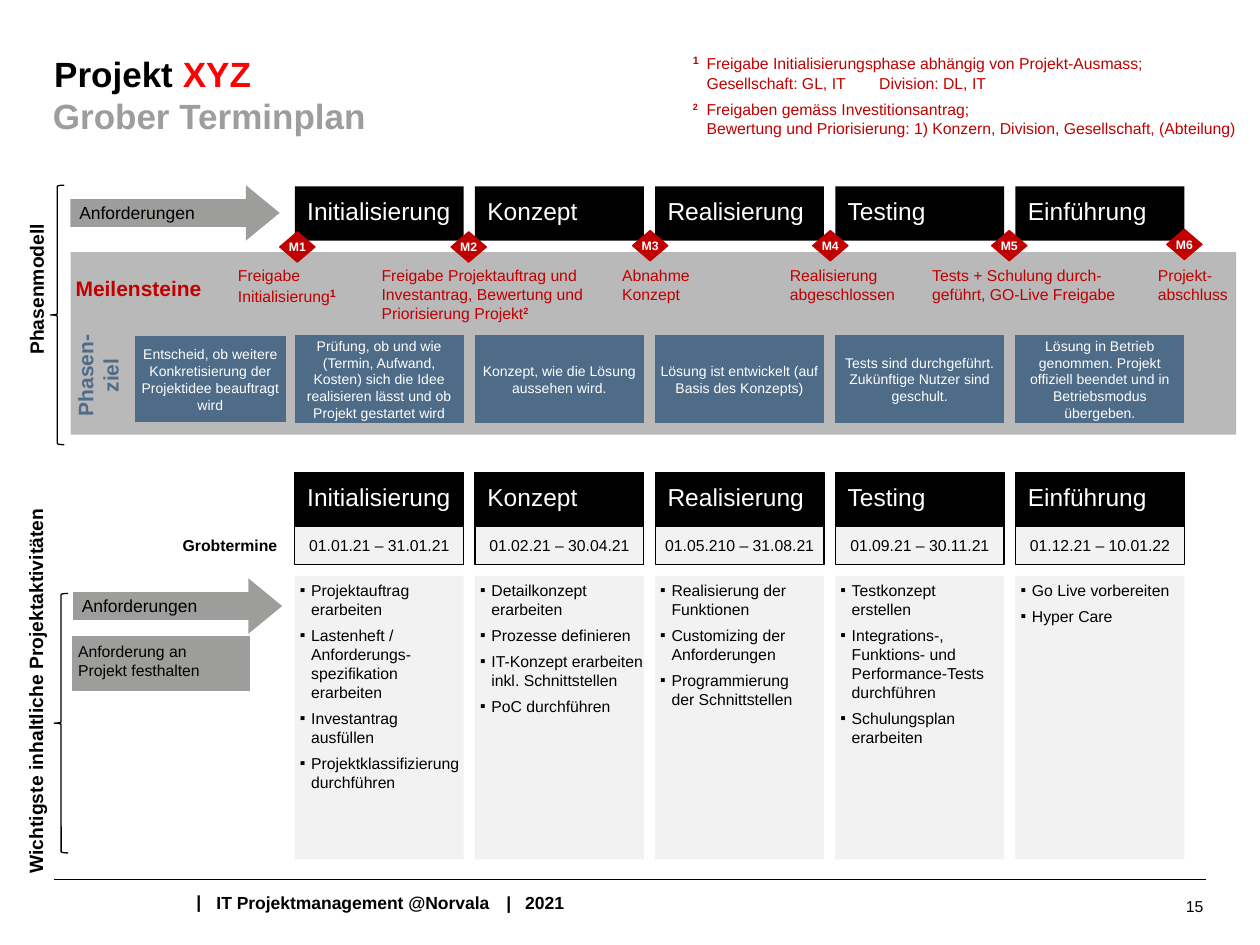
from copy import deepcopy

from lxml import etree
from pptx import Presentation
from pptx import util as u
from pptx.dml.color import RGBColor
from pptx.enum import shapes, text
from pptx.oxml.ns import qn

BLACK, WHITE, RED, DARK_RED = "000000", "FFFFFF", "FF0000", "C00000"
GREY, PALE, BLUE, INK = "9D9D9C", "F2F2F2", "4E6C88", "1A1A1A"
LEFT, CENTER, RIGHT = (text.PP_ALIGN.LEFT, text.PP_ALIGN.CENTER, text.PP_ALIGN.RIGHT)
TOP, MIDDLE = text.MSO_ANCHOR.TOP, text.MSO_ANCHOR.MIDDLE
KIND = shapes.MSO_SHAPE
NO_INSET, SLIM, TITLE_INSET = (0, 0, 0, 0), (0.04,) * 4, (0, 0.05, 0.1, 0.05)
DATE_INSET = (0.07, 0.04, 0.07, 0.04)


def color(value):
    return RGBColor.from_string(value)


def child(parent, tag, **attributes):
    return etree.SubElement(parent, qn(tag), attributes)


def write_span(para, words, size, ink, bold, raised=False):
    """Write one run per line, with a line break of the same size between."""
    for number, line in enumerate(words.split("\n")):
        if number:
            para.add_line_break()
            para._p[-1].append(deepcopy(span._r.rPr))
        span = para.add_run()
        span.text = line
        span.font.name, span.font.size, span.font.bold = "Arial", u.Pt(size), bold
        span.font.color.rgb = color(ink)
        if raised:
            span._r.rPr.set("baseline", "30000")


def write(frame, paragraphs, size=9, ink=BLACK, bold=False, align=LEFT, anchor=TOP,
          inset=(0.1, 0.05, 0.1, 0.05), wrap=True, bullet=None, gaps=(), tabs=()):
    """Fill a frame; a paragraph is a string or a list of (words, changes)."""
    frame.auto_size = text.MSO_AUTO_SIZE.NONE
    frame.word_wrap, frame.vertical_anchor = wrap, anchor
    (frame.margin_left, frame.margin_top,
     frame.margin_right, frame.margin_bottom) = map(u.Inches, inset)
    if isinstance(paragraphs, str):
        paragraphs = [paragraphs]
    for number, content in enumerate(paragraphs):
        para = frame.add_paragraph() if number else frame.paragraphs[0]
        para.alignment = align
        props = para._p.get_or_add_pPr()
        if bullet:
            props.set("marL", str(u.Inches(0.09)))
            props.set("indent", str(-u.Inches(0.09)))
            child(props, "a:buFont", typeface="Arial")
            child(props, "a:buChar", char=bullet)
        if tabs:
            stops = child(props, "a:tabLst")
            for stop in tabs:
                child(stops, "a:tab", pos=str(u.Inches(stop)), algn="l")
        if number and gaps:
            para.space_before = u.Pt(gaps[number - 1])
        if isinstance(content, str):
            content = [(content, {})]
        for words, changes in content:
            write_span(para, words, **{"size": size, "ink": ink, "bold": bold, **changes})


class Plan:
    """Current slide on a grid of 100 columns by 75 rows."""

    def __init__(self, deck):
        self.column, self.row = deck.slide_width / 100, deck.slide_height / 75
        self.page = deck.slides.add_slide(deck.slide_layouts[5])

    def place(self, left, top, width, height):
        return [round(n) for n in (left * self.column, top * self.row,
                                   width * self.column, height * self.row)]

    def title(self, area, paragraphs, **style):
        title = self.page.shapes.title
        title.left, title.top, title.width, title.height = self.place(*area)
        write(title.text_frame, paragraphs, **style)

    def label(self, area, paragraphs, turn=0, **style):
        box = self.page.shapes.add_textbox(*self.place(*area))
        box.rotation = turn
        write(box.text_frame, paragraphs, **style)

    def shape(self, kind, area, paragraphs=None, fill=None, line=None, opacity=None,
              adjust=(), **style):
        box = self.page.shapes.add_shape(kind, *self.place(*area))
        box.shadow.inherit = False
        if fill:
            box.fill.solid()
            box.fill.fore_color.rgb = color(fill)
            if opacity:
                tone = box.fill._xPr.find(".//" + qn("a:srgbClr"))
                child(tone, "a:alpha", val=str(opacity * 1000))
        else:
            box.fill.background()
        if line:
            box.line.color.rgb, box.line.width = color(line), u.Pt(0.75)
        else:
            box.line.fill.background()
        for number, value in enumerate(adjust):
            box.adjustments[number] = value
        if paragraphs:
            write(box.text_frame, paragraphs, **style)

    def rule(self, left, right, row):
        start, end = self.place(left, row, 0, 0), self.place(right, row, 0, 0)
        line = self.page.shapes.add_connector(shapes.MSO_CONNECTOR.STRAIGHT, *start[:2], *end[:2])
        line.line.color.rgb, line.line.width = color(BLACK), u.Pt(0.75)
        child(line._element.spPr, "a:effectLst")

    def heading(self, left, top, name, line=None):
        self.shape(KIND.RECTANGLE, (left, top, 13.4, 4.3), name, fill=BLACK, line=line,
                   size=14, ink=WHITE, anchor=MIDDLE, inset=(0.1, 0, 0.1, 0.05))

    def arrow(self, left, top):
        self.shape(KIND.RIGHT_ARROW, (left, top, 16.6, 4.4), fill=GREY, adjust=(0.5, 0.609))
        self.label((left + 0.7, top + 1.35, 13.4, 1.7), "Anforderungen", size=10, inset=NO_INSET)

    def goal(self, left, top, width, height, words):
        self.shape(KIND.FLOWCHART_PROCESS, (left, top, width, height), words, fill=BLUE, size=8,
                   ink=WHITE, align=CENTER, anchor=MIDDLE, inset=SLIM)

    def section(self, brace, label, name):
        self.shape(KIND.LEFT_BRACE, brace, line=BLACK)
        self.label(label, name, turn=270, size=11, bold=True, align=CENTER, inset=NO_INSET)


# Phase: name, goal, dates, activities
PHASES = [
    ("Initialisierung", "Prüfung, ob und wie (Termin, Aufwand, Kosten) sich die Idee "
     "realisieren lässt und ob Projekt gestartet wird", "01.01.21 – 31.01.21",
     ["Projektauftrag\nerarbeiten", "Lastenheft /\nAnforderungs-\nspezifikation\nerarbeiten",
      "Investantrag\nausfüllen", "Projektklassifizierung\ndurchführen"]),
    ("Konzept", "Konzept, wie die Lösung aussehen wird.", "01.02.21 – 30.04.21",
     ["Detailkonzept\nerarbeiten", "Prozesse definieren",
      "IT-Konzept erarbeiten\ninkl. Schnittstellen", "PoC durchführen"]),
    ("Realisierung", "Lösung ist entwickelt (auf Basis des Konzepts)", "01.05.210 – 31.08.21",
     ["Realisierung der\nFunktionen", "Customizing der\nAnforderungen",
      "Programmierung\nder Schnittstellen"]),
    ("Testing", "Tests sind durchgeführt. Zukünftige Nutzer sind geschult.",
     "01.09.21 – 30.11.21",
     ["Testkonzept\nerstellen", "Integrations-,\nFunktions- und\nPerformance-Tests\ndurchführen",
      "Schulungsplan\nerarbeiten"]),
    ("Einführung", "Lösung in Betrieb genommen. Projekt offiziell beendet und in "
     "Betriebsmodus übergeben.", "01.12.21 – 10.01.22", ["Go Live vorbereiten", "Hyper Care"]),
]
RAISED = {"bold": True, "raised": True}
# Milestone: diamond left and top, label left and width, label
MILESTONES = [
    (22.2, 18.4, 17.9, 9.7, [("Freigabe\nInitialisierung", {}), ("1", {**RAISED, "size": 10.5})]),
    (35.8, 18.4, 29.3, 17.8, [("Freigabe Projektauftrag und\nInvestantrag, Bewertung und\n"
                               "Priorisierung Projekt", {}), ("2", RAISED)]),
    (50.2, 18.3, 48.4, 7.4, [("Abnahme\nKonzept", {})]),
    (64.5, 18.3, 61.7, 13.3, [("Realisierung\nabgeschlossen", {})]),
    (78.7, 18.3, 73, 14.5, [("Tests + Schulung durch-\ngeführt, GO-Live Freigabe", {})]),
    (92.6, 18.2, 90.9, 7.9, [("Projekt-\nabschluss", {})]),
]


def main():
    deck = Presentation()
    deck.slide_width, deck.slide_height = u.Inches(10), u.Inches(7.5)
    plan = Plan(deck)

    # Title and release notes
    plan.title((4.3, 3.7, 45, 3.9), [[("Projekt ", {}), ("XYZ", {"ink": RED})]],
               size=20, bold=True, inset=TITLE_INSET)
    plan.label((4.2, 7, 45, 3.9), "Grober Terminplan", size=20, ink=GREY, bold=True,
               inset=TITLE_INSET)
    plan.label((54, 3.6, 44.4, 7.1), [
        [("1", {**RAISED, "size": 10.5}),
         ("\tFreigabe Initialisierungsphase abhängig von Projekt-Ausmass;", {})],
        "\tGesellschaft: GL, IT\tDivision: DL, IT",
        [("2", RAISED), ("\tFreigaben gemäss Investitionsantrag;", {})],
        "\tBewertung und Priorisierung: 1) Konzern, Division, Gesellschaft, (Abteilung)",
    ], ink=DARK_RED, wrap=False, gaps=(0, 4, 0), tabs=(0.11, 1.48))

    # Phase model: band, requirements and row names
    plan.shape(KIND.FLOWCHART_PROCESS, (5.6, 20, 92.5, 14.5), fill=INK, opacity=30)
    plan.arrow(5.6, 14.7)
    plan.goal(10.7, 26.7, 12, 6.8,
              "Entscheid, ob weitere Konkretisierung der Projektidee beauftragt wird")
    plan.label((3.7, 26.8, 8.1, 5), "Phasen-ziel", turn=270, size=12, ink=BLUE, bold=True,
               align=CENTER, anchor=MIDDLE, inset=TITLE_INSET)
    plan.label((6, 21.4, 11.1, 3), "Meilensteine", size=12, ink=DARK_RED, bold=True,
               anchor=MIDDLE, inset=TITLE_INSET, wrap=False)
    plan.section((4, 14.7, 1.1, 20.6), (-3.7, 22, 13.2, 1.9), "Phasenmodell")

    # Schedule: row names and requirements
    plan.label((5.6, 41.7, 17.1, 3.1), "Grobtermine", bold=True, align=RIGHT, anchor=MIDDLE,
               inset=DATE_INSET, wrap=False)
    plan.section((4.3, 47.1, 1.1, 20.6), (-12.1, 53.9, 29.9, 1.9),
                 "Wichtigste inhaltliche Projektaktivitäten")
    plan.shape(KIND.RECTANGLE, (5.8, 50.5, 14, 4.3), "Anforderung an\nProjekt festhalten",
               fill=GREY, line=GREY, inset=SLIM, wrap=False)
    plan.arrow(5.8, 45.9)

    # One column per phase
    for number, (name, goal, dates, activities) in enumerate(PHASES):
        left = 23.4 + 14.3 * number
        plan.heading(left, 14.8, name)
        plan.goal(left, 26.6, 13.4, 7, goal)
        plan.shape(KIND.RECTANGLE, (left, 41.7, 13.4, 3.1), dates, fill=PALE, line=BLACK,
                   align=CENTER, anchor=MIDDLE, inset=DATE_INSET, wrap=False)
        plan.heading(left, 37.5, name, line=BLACK)
        plan.shape(KIND.RECTANGLE, (left, 45.7, 13.4, 22.5), activities, fill=PALE,
                   inset=SLIM, wrap=False, bullet="▪", gaps=(4,) * len(activities))

    # Milestones
    for number, (left, top, label_left, width, label) in enumerate(MILESTONES, 1):
        plan.label((label_left, 20.6, width, 5.7), [label], ink=DARK_RED, wrap=False)
        plan.shape(KIND.FLOWCHART_DECISION, (left, top, 2.8, 2.4), f"M{number}", fill=DARK_RED,
                   line=DARK_RED, size=7, ink=WHITE, bold=True, align=CENTER, anchor=MIDDLE,
                   inset=NO_INSET, wrap=False)

    # Footer
    plan.rule(4.3, 95.7, 69.8)
    plan.label((14.6, 70.2, 2.4, 2.7), "|", size=10, bold=True, wrap=False)
    plan.label((16.2, 70.3, 32.3, 2.7), "IT Projektmanagement @Norvala\t|\t2021", size=10,
               bold=True, wrap=False, tabs=(2.3, 2.45))
    plan.label((73.2, 69.5, 23.3, 4.8), "15", align=RIGHT, anchor=MIDDLE)
    deck.save("out.pptx")


if __name__ == "__main__":
    main()
